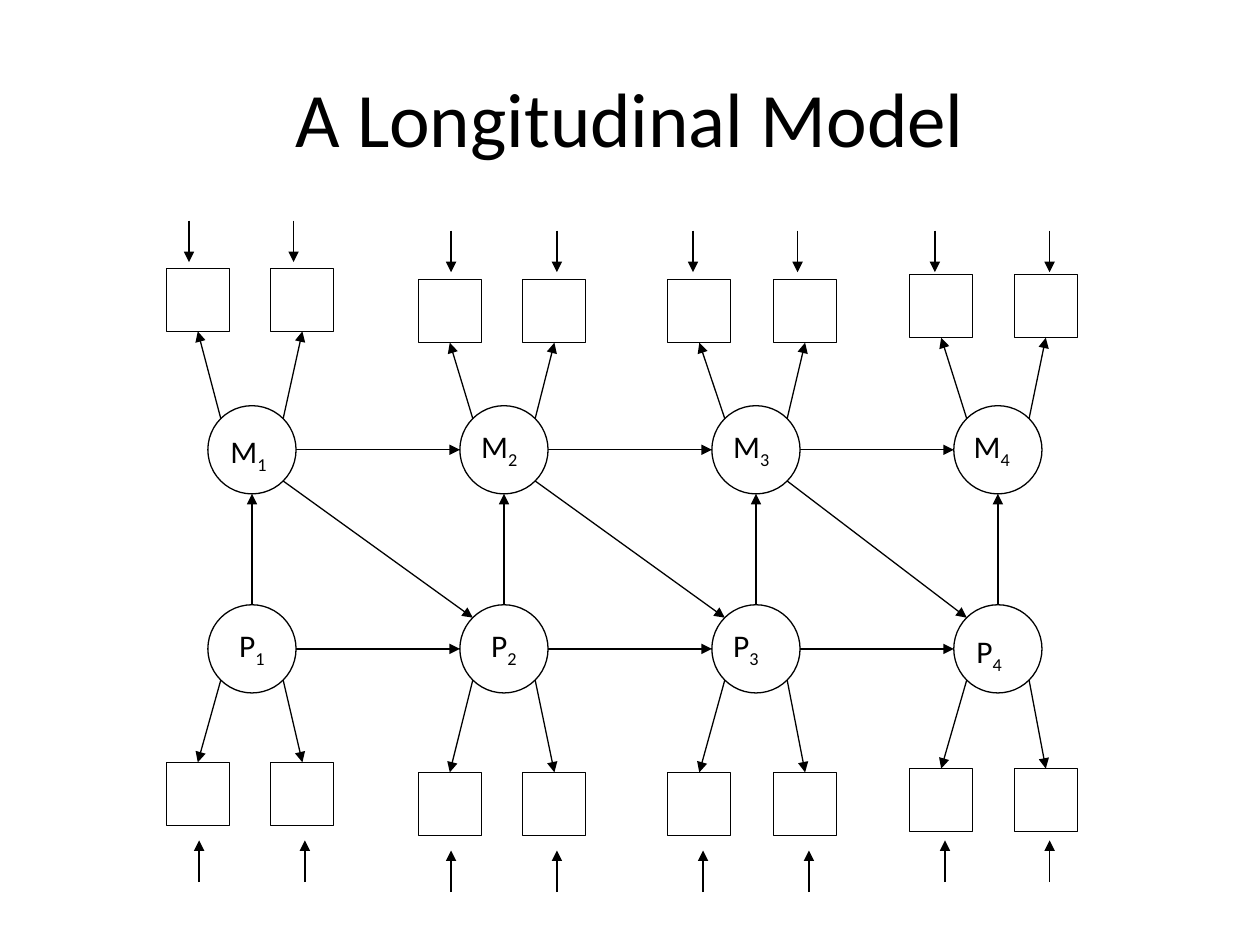
from dataclasses import dataclass
from math import sqrt

from lxml.etree import SubElement
from pptx import Presentation
from pptx.dml.color import RGBColor
from pptx.enum.shapes import MSO_CONNECTOR, MSO_SHAPE
from pptx.enum.text import MSO_ANCHOR, MSO_AUTO_SIZE, PP_ALIGN
from pptx.oxml.ns import qn
from pptx.shapes.autoshape import Shape
from pptx.shapes.connector import Connector
from pptx.util import Inches, Pt

Point = tuple[float, float]


@dataclass(frozen=True)
class Theme:
    ink: RGBColor = RGBColor(0, 0, 0)
    font: str = "Calibri"
    title: Pt = Pt(44)
    label: Pt = Pt(18)
    line: Pt = Pt(0.75)


@dataclass(frozen=True)
class Wave:
    """One time point: two latent circles, each with two indicator boxes."""
    number: int
    x: float  # centre of the circles
    boxes: Point  # left edges of the indicators
    m_box_y: float
    p_box_y: float
    m_errors: Point  # x of the error arrows above
    p_errors: Point  # x of the error arrows below
    m_error_y: float  # tail of the error arrows
    p_error_y: float
    m_label: Point
    p_label: Point


THEME = Theme()
RADIUS, BOX, ERROR = 0.35, 0.5, 0.33
DIAG = RADIUS / sqrt(2)
M_Y, P_Y = 3.57, 5.15

WAVES = [
    Wave(1, 2, (1.32, 2.15), 2.13, 6.05, (1.5, 2.33), (1.58, 2.42),
         1.75, 7, (1.73, 3.38), (1.8, 4.92)),
    Wave(2, 4, (3.32, 4.15), 2.22, 6.13, (3.58, 4.42), (3.58, 4.42),
         1.83, 7.08, (3.72, 3.34), (3.8, 4.92)),
    Wave(3, 6, (5.3, 6.14), 2.22, 6.13, (5.5, 6.33), (5.58, 6.42),
         1.83, 7.08, (5.72, 3.34), (5.72, 4.92)),
    Wave(4, 7.92, (7.22, 8.05), 2.18, 6.1, (7.42, 8.33), (7.5, 8.33),
         1.83, 7, (7.63, 3.34), (7.65, 4.97)),
]

prs = Presentation()
prs.slide_width, prs.slide_height = Inches(10), Inches(7.5)
s = prs.slides.add_slide(prs.slide_layouts[6])


def add_outline(kind: MSO_SHAPE, x: float, y: float, size: float) -> Shape:
    sp = s.shapes.add_shape(kind, Inches(x), Inches(y), Inches(size), Inches(size))
    sp.shadow.inherit = False
    sp.fill.background()
    sp.line.color.rgb = THEME.ink
    sp.line.width = THEME.line
    return sp


def add_circle(x: float, y: float) -> Shape:
    return add_outline(MSO_SHAPE.OVAL, x - RADIUS, y - RADIUS, 2 * RADIUS)


def add_arrow(start: Point, end: Point) -> Connector:
    cxn = s.shapes.add_connector(
        MSO_CONNECTOR.STRAIGHT, *(Inches(v) for v in (*start, *end)))
    cxn.line.color.rgb = THEME.ink
    cxn.line.width = THEME.line
    SubElement(cxn.line._get_or_add_ln(), qn("a:tailEnd"), type="triangle")
    SubElement(cxn._element.spPr, qn("a:effectLst"))
    return cxn


def add_label(letter: str, number: int, at: Point, width: float) -> None:
    tb = s.shapes.add_textbox(Inches(at[0]), Inches(at[1]), Inches(width), Inches(0.4))
    tf = tb.text_frame
    tf.word_wrap = False
    tf.auto_size = MSO_AUTO_SIZE.SHAPE_TO_FIT_TEXT
    p = tf.paragraphs[0]
    for text in (letter, str(number)):
        r = p.add_run()
        r.text = text
        r.font.name, r.font.size = THEME.font, THEME.label
        r.font.color.rgb = THEME.ink
    r.font._element.set("baseline", "-25000")


def add_indicators(wave: Wave, y: float, circle_y: float) -> None:
    """Draw two boxes, each with an arrow from the near side of the circle."""
    above = y < circle_y
    start_y = circle_y + (-DIAG if above else DIAG)
    for x, side in zip(wave.boxes, (-1, 1)):
        box = add_outline(MSO_SHAPE.RECTANGLE, x, y, BOX)
        cxn = add_arrow((wave.x + side * DIAG, start_y),
                        (x + BOX / 2, y + BOX if above else y))
        cxn.end_connect(box, 2 if above else 0)


# Title
tb = s.shapes.add_textbox(Inches(0.5), Inches(0.3), Inches(9), Inches(1.25))
tf = tb.text_frame
tf.word_wrap = True
tf.vertical_anchor = MSO_ANCHOR.MIDDLE
tf.text = "A Longitudinal Model"
p = tf.paragraphs[0]
p.alignment = PP_ALIGN.CENTER
r = p.runs[0]
r.font.name, r.font.size = THEME.font, THEME.title
r.font.color.rgb = THEME.ink

# Waves: circles, indicators, labels and error arrows
for wave in WAVES:
    p_circle = add_circle(wave.x, P_Y)
    add_circle(wave.x, M_Y)
    cxn = add_arrow((wave.x, P_Y - RADIUS), (wave.x, M_Y + RADIUS))
    cxn.begin_connect(p_circle, 0)
    add_indicators(wave, wave.m_box_y, M_Y)
    add_indicators(wave, wave.p_box_y, P_Y)
    add_label("M", wave.number, wave.m_label, 0.5)
    add_label("P", wave.number, wave.p_label, 0.46)
    for x in wave.m_errors:
        add_arrow((x, wave.m_error_y), (x, wave.m_error_y + ERROR))
    for x in wave.p_errors:
        add_arrow((x, wave.p_error_y), (x, wave.p_error_y - ERROR))

# Paths from each wave to the next
for now, after in zip(WAVES, WAVES[1:]):
    for y in (M_Y, P_Y):
        add_arrow((now.x + RADIUS, y), (after.x - RADIUS, y))
    add_arrow((now.x + DIAG, M_Y + DIAG), (after.x - DIAG, P_Y - DIAG))

prs.save("out.pptx")
